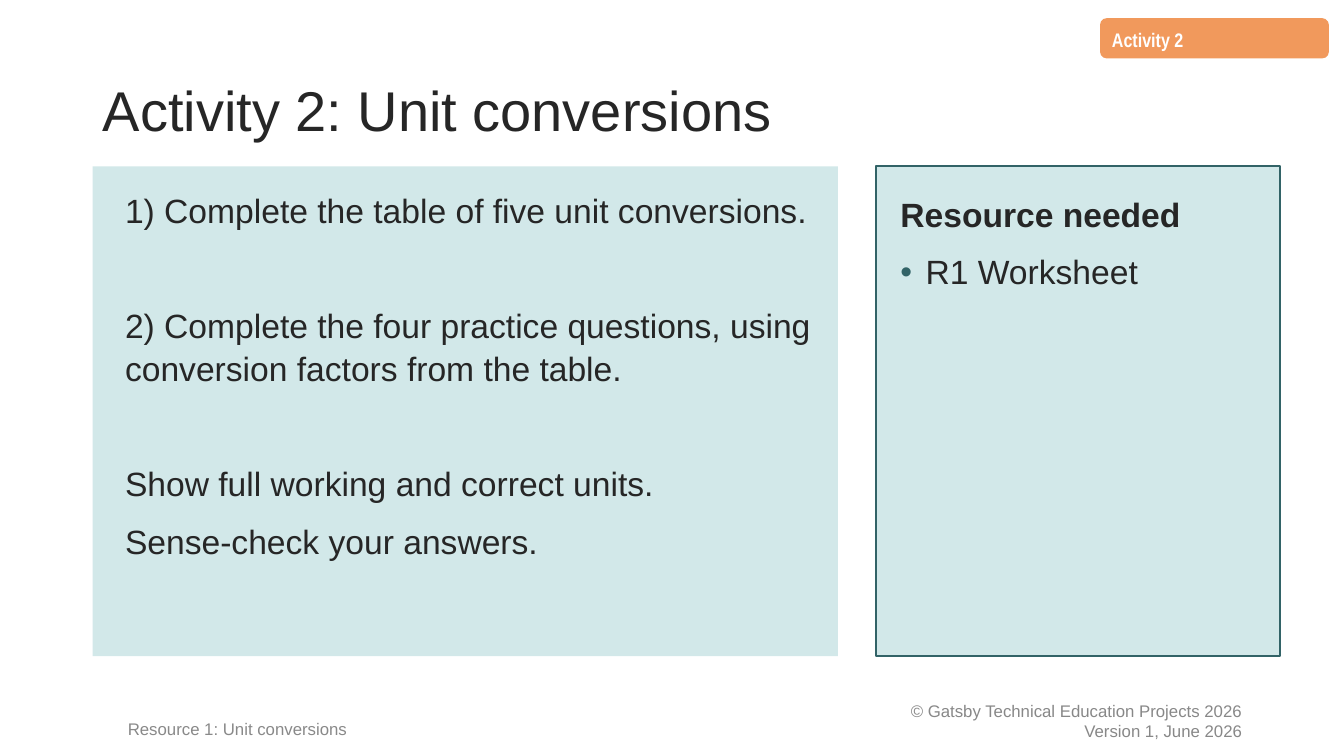
from dataclasses import dataclass

from lxml.etree import SubElement
from pptx import Presentation
from pptx.dml.color import RGBColor
from pptx.enum.shapes import MSO_SHAPE
from pptx.enum.text import MSO_ANCHOR, MSO_AUTO_SIZE, PP_ALIGN
from pptx.oxml.ns import qn
from pptx.util import Inches, Pt


@dataclass(frozen=True)
class Theme:
    font: str = "Arial"
    tag_font: str = "Arial Narrow"
    ink: str = "262626"
    panel: str = "D2E8E9"
    accent: str = "326367"
    tag: str = "F1995C"
    tag_ink: str = "FFFFFF"
    copyright_ink: str = "888888"
    footer_ink: str = "898989"
    title_size: int = 40
    body_size: int = 24
    tag_size: int = 14
    footer_size: int = 12


@dataclass(frozen=True)
class Line:
    text: str
    before: float = 0
    bold: bool = False
    bullet: bool = False
    indent: float = 0


class SlideBuilder:
    def __init__(self, deck, theme):
        self.deck = deck
        self.theme = theme
        self.slide = deck.slides.add_slide(deck.slide_layouts[3])

    def area(self, left, top, width, height):
        across, down = self.deck.slide_width, self.deck.slide_height
        return [int(share * side / 100) for share, side in
                zip((left, top, width, height), (across, down, across, down))]

    def place(self, shape, area):
        shape.left, shape.top, shape.width, shape.height = self.area(*area)

    def set_lines(self, shape, lines, size, color, font=None, spacing=1.0,
                  align=PP_ALIGN.LEFT, anchor=MSO_ANCHOR.MIDDLE, inset=None):
        frame = shape.text_frame
        frame.text = "\n".join(line.text for line in lines)
        frame.word_wrap = True
        frame.auto_size = MSO_AUTO_SIZE.NONE
        frame.vertical_anchor = anchor
        frame.margin_left = frame.margin_right = Inches(inset or 0.1)
        frame.margin_top = frame.margin_bottom = Inches(inset or 0.05)
        for line, paragraph in zip(lines, frame.paragraphs):
            self.indent(paragraph, line)
            paragraph.alignment = align
            paragraph.line_spacing = spacing
            paragraph.space_before = Pt(line.before)
            for run in paragraph.runs:
                run.font.name = font or self.theme.font
                run.font.size = Pt(size)
                run.font.bold = line.bold
                run.font.color.rgb = RGBColor.from_string(color)

    def indent(self, paragraph, line):
        properties = paragraph._p.get_or_add_pPr()
        properties.set("marL", str(Inches(line.indent)))
        properties.set("indent", str(Inches(-line.indent if line.bullet else 0)))
        if line.bullet:
            bullet_color = SubElement(properties, qn("a:buClr"))
            SubElement(bullet_color, qn("a:srgbClr"), val=self.theme.accent)
            SubElement(properties, qn("a:buFont"), typeface=self.theme.font)
            SubElement(properties, qn("a:buChar"), char="•")
        else:
            SubElement(properties, qn("a:buNone"))

    def title(self, text, area):
        heading = self.slide.shapes.title
        self.place(heading, area)
        self.set_lines(heading, [Line(text)], self.theme.title_size,
                       self.theme.ink, spacing=0.9)

    def panel(self, index, lines, area, inset, outlined=False):
        panel = self.slide.placeholders[index]
        self.place(panel, area)
        panel.fill.solid()
        panel.fill.fore_color.rgb = RGBColor.from_string(self.theme.panel)
        if outlined:
            panel.line.color.rgb = RGBColor.from_string(self.theme.accent)
            panel.line.width = Pt(1.5)
        self.set_lines(panel, lines, self.theme.body_size, self.theme.ink,
                       spacing=1.08, anchor=MSO_ANCHOR.TOP, inset=inset)

    def tag(self, text, area):
        tag = self.slide.shapes.add_shape(
            MSO_SHAPE.FLOWCHART_ALTERNATE_PROCESS, *self.area(*area))
        tag.shadow.inherit = False
        tag.fill.solid()
        tag.fill.fore_color.rgb = RGBColor.from_string(self.theme.tag)
        tag.line.fill.background()
        self.set_lines(tag, [Line(text, bold=True)], self.theme.tag_size,
                       self.theme.tag_ink, font=self.theme.tag_font,
                       spacing=0.88, anchor=MSO_ANCHOR.BOTTOM)

    def footer(self, lines, area, color, align=PP_ALIGN.LEFT):
        footer = self.slide.shapes.add_textbox(*self.area(*area))
        self.set_lines(footer, lines, self.theme.footer_size, color, align=align)


def main():
    deck = Presentation()
    deck.slide_width, deck.slide_height = Inches(13.33), Inches(7.5)
    theme = Theme()
    builder = SlideBuilder(deck, theme)

    margin, panel_top, panel_height = 6.9, 22, 64.8
    step, section = 10, 51

    builder.footer([Line("© Gatsby Technical Education Projects 2026"),
                    Line("Version 1, June 2026")],
                   (59.41, 92.67, 33.76, 5.33), theme.copyright_ink,
                   PP_ALIGN.RIGHT)
    builder.title("Activity 2: Unit conversions", (margin, 5.33, 86.27, 19.33))
    builder.footer([Line("Resource 1: Unit conversions", indent=0.25)],
                   (margin, 93.7, 34.51, 5.33), theme.footer_ink)
    builder.tag("Activity 2", (81.85, 2.4, 17.03, 5.33))

    tasks = [
        ("1) Complete the table of five unit conversions.", 0),
        ("2) Complete the four practice questions, using conversion factors "
         "from the table.", section),
        ("Show full working and correct units.", section),
        ("Sense-check your answers.", step),
    ]
    builder.panel(1, [Line(text, before, indent=0.12) for text, before in tasks],
                  (margin, panel_top, 55.44, panel_height), inset=0.2)
    builder.panel(2, [Line("Resource needed", bold=True),
                      Line("R1 Worksheet", step, bullet=True, indent=0.25)],
                  (65.19, panel_top, 30.08, panel_height), inset=0.24,
                  outlined=True)
    deck.save("out.pptx")


if __name__ == "__main__":
    main()
